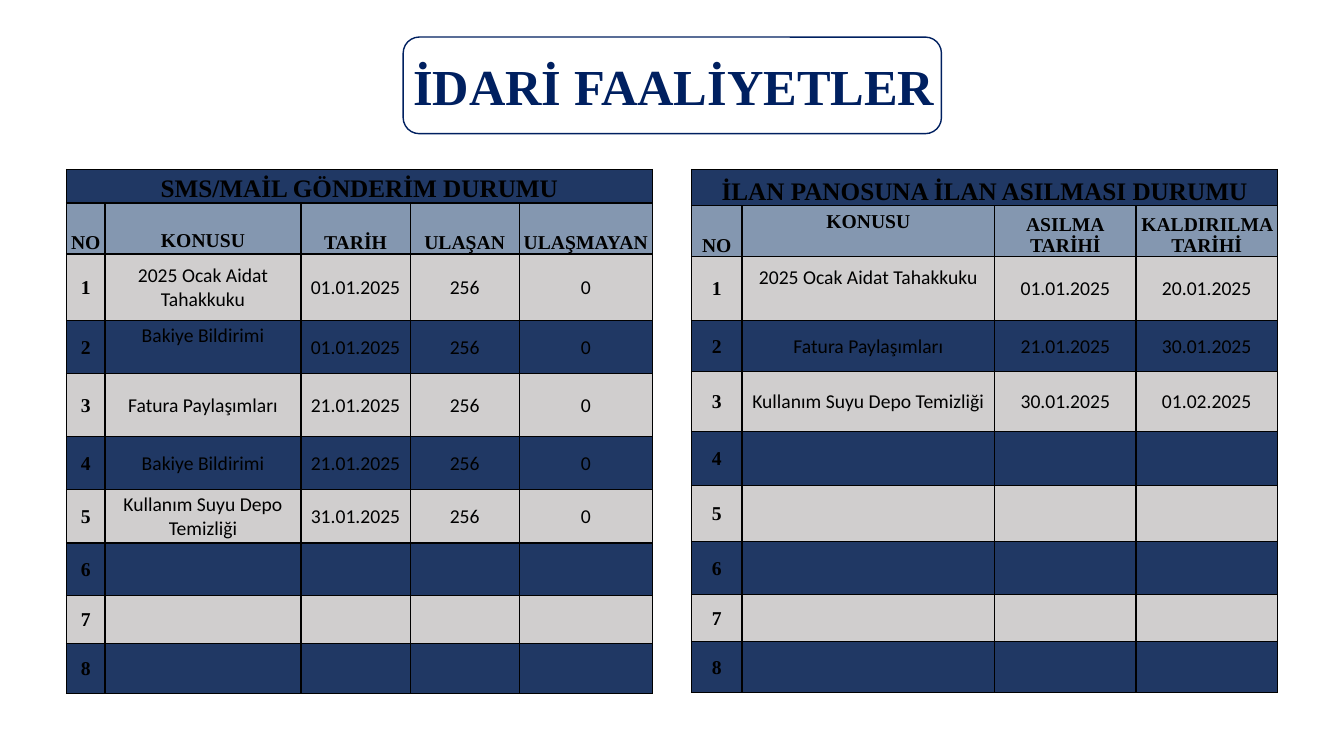
from lxml.etree import SubElement
from pptx import Presentation
from pptx.dml.color import RGBColor
from pptx.enum.shapes import MSO_SHAPE
from pptx.enum.text import MSO_ANCHOR, PP_ALIGN
from pptx.oxml.ns import qn
from pptx.util import Pt

NAVY, DARK, STEEL, GREY, BLACK = "002060", "203864", "8497B0", "D0CECE", "000000"
SERIF, SANS = "Times New Roman", "Calibri"
ROW_COUNT = 8

SMS_HEADINGS = ["NO", "KONUSU", "TARİH", "ULAŞAN", "ULAŞMAYAN"]
SMS_RECORDS = [
    ["2025 Ocak Aidat Tahakkuku", "01.01.2025", "256", "0"],
    ["Bakiye Bildirimi", "01.01.2025", "256", "0"],
    ["Fatura Paylaşımları", "21.01.2025", "256", "0"],
    ["Bakiye Bildirimi", "21.01.2025", "256", "0"],
    ["Kullanım Suyu Depo Temizliği", "31.01.2025", "256", "0"],
]
NOTICE_HEADINGS = ["NO", "KONUSU", "ASILMA\nTARİHİ", "KALDIRILMA TARİHİ"]
NOTICE_RECORDS = [
    ["2025 Ocak Aidat Tahakkuku", "01.01.2025", "20.01.2025"],
    ["Fatura Paylaşımları", "21.01.2025", "30.01.2025"],
    ["Kullanım Suyu Depo Temizliği", "30.01.2025", "01.02.2025"],
]


def color(value):
    """Turn a hex string into a colour."""
    return RGBColor.from_string(value)


def write(frame, text, size=14, font=SERIF, ink=BLACK, bold=True, align=PP_ALIGN.CENTER):
    """Fill a text frame, one paragraph per line of text."""
    frame.text = text
    for para in frame.paragraphs:
        para.alignment = align
        for span in para.runs:
            span.font.size = Pt(size)
            span.font.name = font
            span.font.bold = bold
            span.font.color.rgb = color(ink)


def add_title(page, text):
    """Draw the rounded frame and the heading over it."""
    frame = page.shapes.add_shape(
        MSO_SHAPE.ROUNDED_RECTANGLE, Pt(288), Pt(26.5), Pt(384.5), Pt(69)
    )
    frame.shadow.inherit = False
    frame.fill.background()
    frame.line.color.rgb = color(NAVY)
    frame.line.width = Pt(1)
    box = page.shapes.add_textbox(Pt(288), Pt(35.5), Pt(397.5), Pt(51))
    box.text_frame.word_wrap = True
    write(box.text_frame, text, size=36, ink=NAVY, align=PP_ALIGN.LEFT)


def style_cell(cell, fill, anchor):
    """Set the borders, fill, anchor and insets of a cell."""
    properties = cell._tc.get_or_add_tcPr()
    for side in ("a:lnL", "a:lnR", "a:lnT", "a:lnB"):
        border = SubElement(properties, qn(side), w=str(Pt(1)))
        solid = SubElement(border, qn("a:solidFill"))
        SubElement(solid, qn("a:srgbClr"), val=BLACK)
    cell.fill.solid()
    cell.fill.fore_color.rgb = color(fill)
    cell.vertical_anchor = anchor
    cell.margin_left = cell.margin_right = cell.margin_top = Pt(0.7)
    cell.margin_bottom = Pt(0)


def add_grid(page, left, title, headings, records, widths, heights, lifts):
    """Add a numbered table; lifts maps cells to their bottom inset."""
    frame = page.shapes.add_table(
        len(heights), len(widths), Pt(left), Pt(121), Pt(sum(widths)), Pt(sum(heights))
    )
    table = frame.table
    table.first_row = table.horz_banding = False
    for column, width in zip(table.columns, widths):
        column.width = Pt(width)
    for row, height in zip(table.rows, heights):
        row.height = Pt(height)

    lines = [[title], headings]
    for number in range(1, ROW_COUNT + 1):
        record = records[number - 1] if number <= len(records) else []
        lines.append([str(number), *record])

    fills = [DARK, STEEL] + [GREY, DARK] * (ROW_COUNT // 2)
    for row, (line, fill) in enumerate(zip(lines, fills)):
        is_heading = row < 2
        anchor = MSO_ANCHOR.BOTTOM if is_heading else MSO_ANCHOR.MIDDLE
        for column in range(len(widths)):
            cell = table.cell(row, column)
            style_cell(cell, fill, anchor)
            if column < len(line):
                strong = is_heading or column == 0
                write(cell.text_frame, line[column], size=14 if row else 18,
                      font=SERIF if strong else SANS, bold=strong)
    table.cell(0, 0).merge(table.cell(0, len(widths) - 1))
    for position, lift in lifts.items():
        table.cell(*position).margin_bottom = Pt(lift)


def main():
    """Build and save the slide."""
    deck = Presentation()
    deck.slide_width, deck.slide_height = Pt(960), Pt(540)
    page = deck.slides.add_slide(deck.slide_layouts[6])
    add_title(page, "İDARİ FAALİYETLER")
    add_grid(
        page, 47.5, "SMS/MAİL GÖNDERİM DURUMU", SMS_HEADINGS, SMS_RECORDS,
        widths=[27.5, 140, 78, 78, 95],
        heights=[24, 36.5, 47.5, 38, 45, 38, 38, 37.5, 34, 36],
        lifts={(1, 1): 2, (3, 1): 17},
    )
    add_grid(
        page, 494, "İLAN PANOSUNA İLAN ASILMASI DURUMU", NOTICE_HEADINGS, NOTICE_RECORDS,
        widths=[36, 180.5, 101, 101],
        heights=[26, 36.5, 45.5, 36.5, 42.5, 39, 40, 37.5, 34, 36.5],
        lifts={(1, 1): 17, (2, 1): 17},
    )
    deck.save("out.pptx")


if __name__ == "__main__":
    main()
